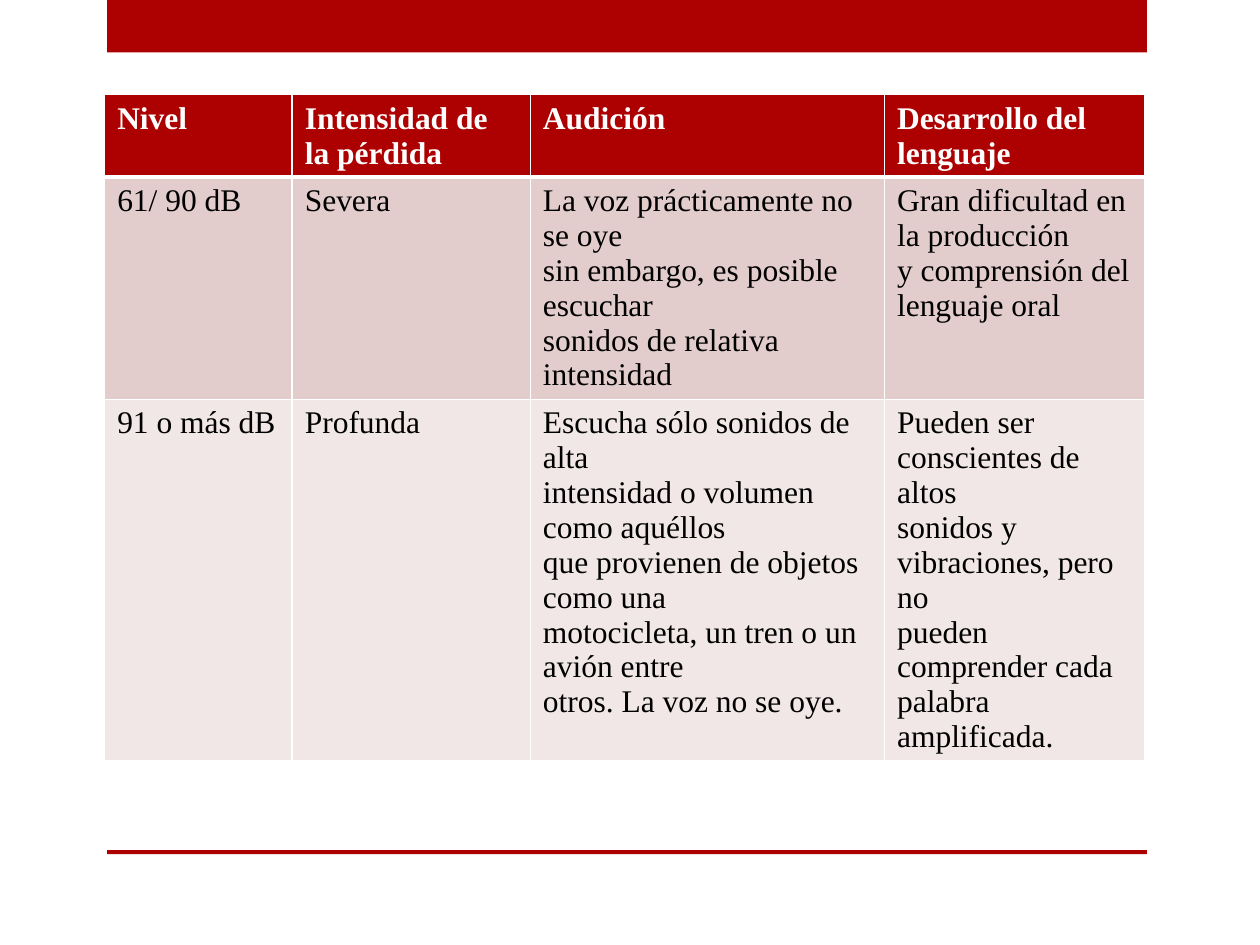
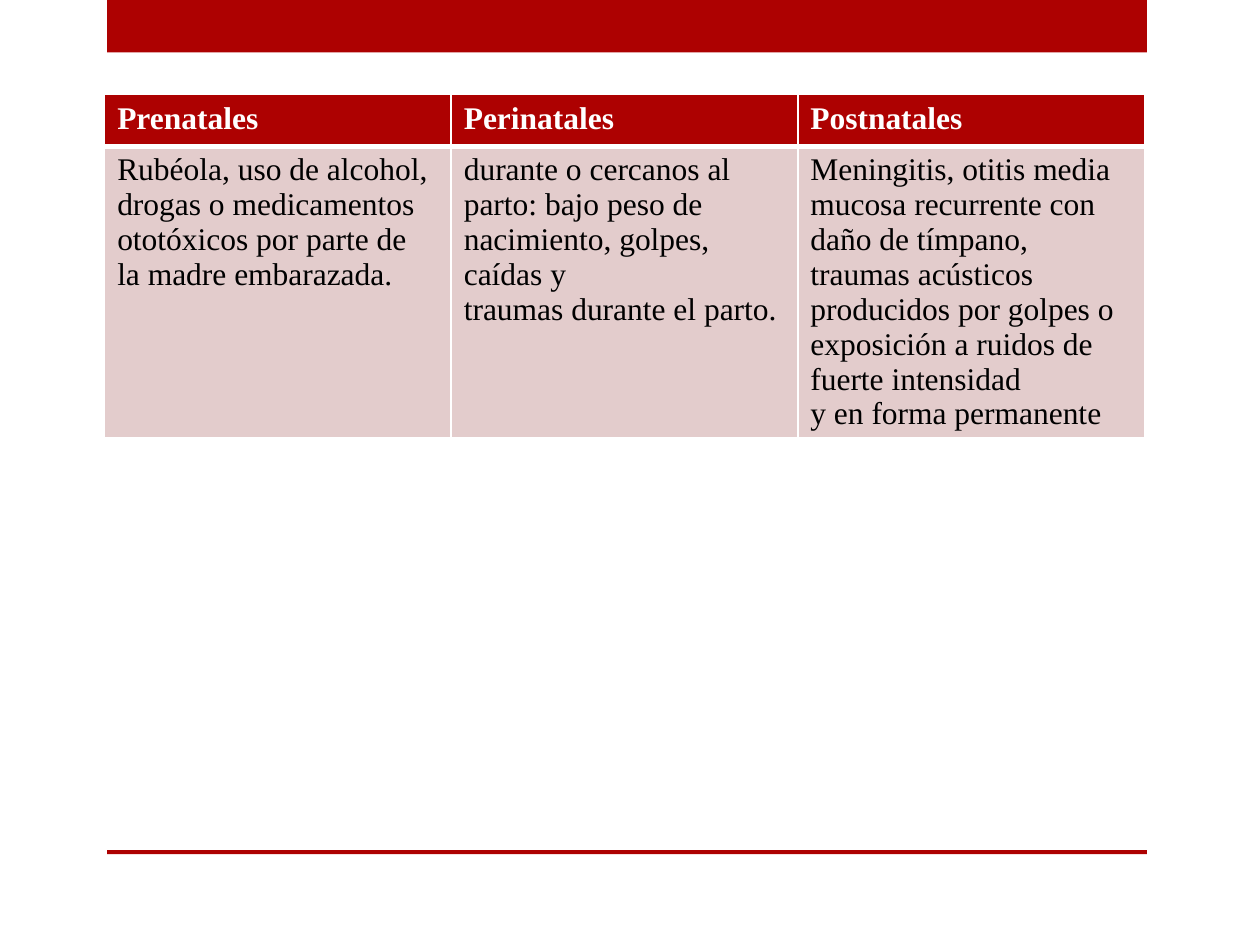
from lxml.etree import SubElement
from pptx import Presentation
from pptx.dml.color import RGBColor
from pptx.enum.shapes import MSO_SHAPE as Shape
from pptx.oxml.ns import qn
from pptx.util import Cm, Pt

RED, WHITE, BLACK = "AD0101", "FFFFFF", "000000"
BODY_FILLS = ["E3CCCC", "F1E7E7"]
FONT = "Times New Roman"
BAND_LEFT, CONTENT_WIDTH = 2.16, 20.96
TABLE_LEFT, TABLE_TOP = 2.11, 1.91

HEARING_LEVELS = [
    ["Nivel", "Intensidad de la pérdida", "Audición", "Desarrollo del lenguaje"],
    ["61/ 90 dB", "Severa",
     "La voz prácticamente no se oye\n"
     "sin embargo, es posible escuchar\n"
     "sonidos de relativa intensidad",
     "Gran dificultad en la producción\n"
     "y comprensión del lenguaje oral"],
    ["91 o más dB", "Profunda",
     "Escucha sólo sonidos de alta\n"
     "intensidad o volumen como aquéllos\n"
     "que provienen de objetos como una\n"
     "motocicleta, un tren o un avión entre\n"
     "otros. La voz no se oye.",
     "Pueden ser conscientes de altos\n"
     "sonidos y vibraciones, pero no\n"
     "pueden comprender cada palabra\n"
     "amplificada."],
]
CAUSES = [
    ["Prenatales", "Perinatales", "Postnatales"],
    ["Rubéola, uso de alcohol, drogas o medicamentos ototóxicos por parte de\n"
     "la madre embarazada.",
     "durante o cercanos al parto: bajo peso de nacimiento, golpes, caídas y\n"
     "traumas durante el parto.",
     "Meningitis, otitis media mucosa recurrente con daño de tímpano,\n"
     "traumas acústicos producidos por golpes o exposición a ruidos de fuerte intensidad\n"
     "y en forma permanente"],
]


def color(hex_code):
    return RGBColor.from_string(hex_code)


def add_band(slide, top, height):
    band = slide.shapes.add_shape(
        Shape.RECTANGLE, Cm(BAND_LEFT), Cm(top), Cm(CONTENT_WIDTH), Cm(height))
    band.shadow.inherit = False
    band.fill.solid()
    band.fill.fore_color.rgb = color(RED)
    band.line.fill.background()


def add_framed_slide(presentation):
    slide = presentation.slides.add_slide(presentation.slide_layouts[6])
    add_band(slide, 0, 1.06)
    add_band(slide, 17.14, 0.08)
    return slide


def set_borders(cell, widths):
    properties = cell._tc.get_or_add_tcPr()
    for side, width in widths.items():
        line = SubElement(properties, qn(f"a:ln{side}"), w=str(Pt(width)))
        fill = SubElement(line, qn("a:solidFill"))
        SubElement(fill, qn("a:srgbClr"), val=WHITE)


def style_cell(cell, fill, text_color, bold):
    cell.fill.solid()
    cell.fill.fore_color.rgb = color(fill)
    for paragraph in cell.text_frame.paragraphs:
        for run in paragraph.runs:
            run.font.name = FONT
            run.font.size = Pt(18)
            run.font.bold = bold
            run.font.color.rgb = color(text_color)


def add_table(slide, rows, column_widths, row_heights):
    table = slide.shapes.add_table(
        len(rows), len(column_widths), Cm(TABLE_LEFT), Cm(TABLE_TOP),
        Cm(sum(column_widths)), Cm(sum(row_heights))).table
    for column, width in zip(table.columns, column_widths):
        column.width = Cm(width)
    for row, height in zip(table.rows, row_heights):
        row.height = Cm(height)
    for row_index, texts in enumerate(rows):
        for column_index, text in enumerate(texts):
            cell = table.cell(row_index, column_index)
            cell.text_frame.text = text
            if row_index == 0:
                set_borders(cell, {"L": 1, "R": 1, "T": 1, "B": 3})
                style_cell(cell, RED, WHITE, True)
            else:
                set_borders(cell, {"L": 1, "R": 1, "B": 1})
                fill = BODY_FILLS[(row_index - 1) % len(BODY_FILLS)]
                style_cell(cell, fill, BLACK, False)


def main():
    presentation = Presentation()
    presentation.slide_width, presentation.slide_height = Cm(25.4), Cm(19.05)
    add_table(add_framed_slide(presentation), HEARING_LEVELS,
              [3.78, 4.8, 7.14, 5.24], [1.64, 4.48, 7.25])
    add_table(add_framed_slide(presentation), CAUSES,
              [CONTENT_WIDTH / 3] * 3, [1.04, 5.87])
    presentation.save("out.pptx")


if __name__ == "__main__":
    main()
